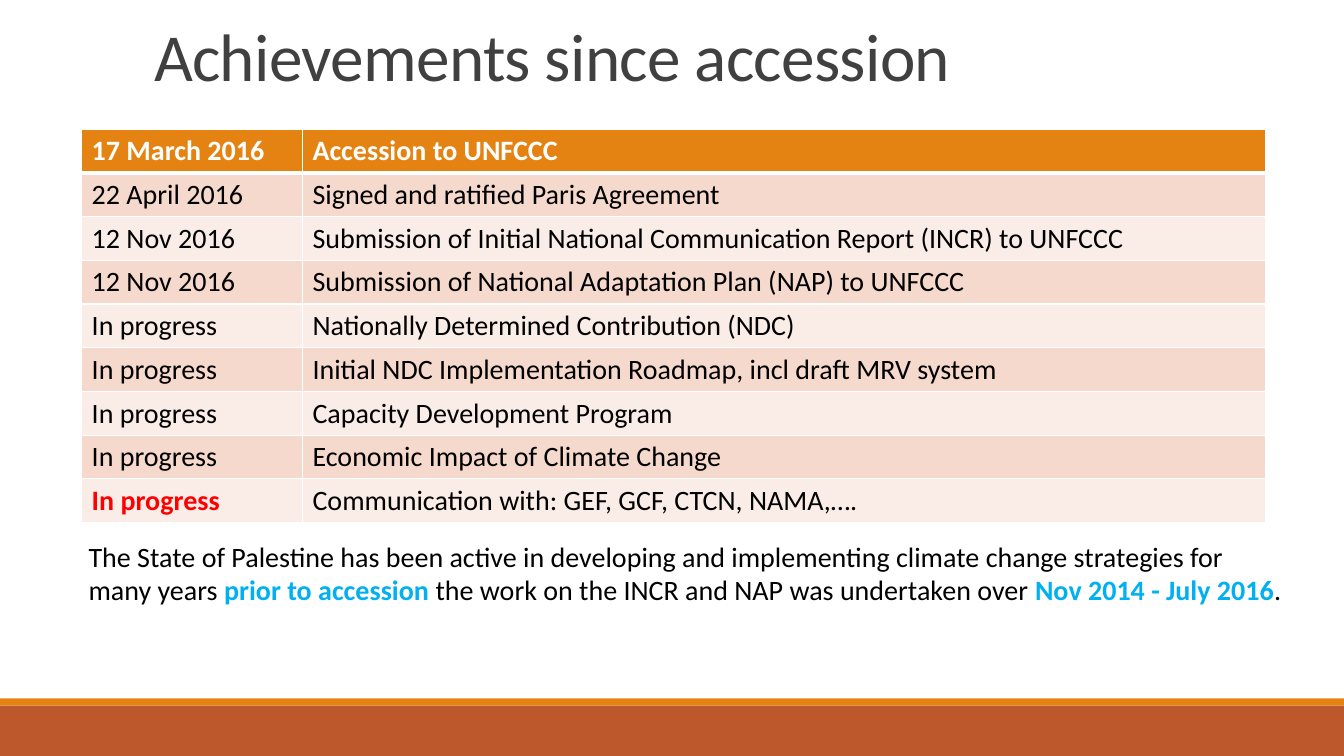
from pptx import Presentation
from pptx.dml.color import RGBColor as RGB
from pptx.enum.shapes import MSO_SHAPE as SHAPE
from pptx.enum.text import MSO_ANCHOR as ANCHOR
from pptx.oxml import parse_xml
from pptx.oxml.ns import nsdecls
from pptx.util import Inches, Pt

COLORS = {
    "white": "FFFFFF", "black": "000000", "title": "404040",
    "orange": "E48312", "rust": "BD582C", "band": "F5D9CC",
    "light": "FAEDE7", "red": "FF0000", "blue": "00B0F0",
}


def add_run(p, text, color, size=20, bold=False):
    r = p.add_run()
    r.text = text
    for name, value in {"name": "Calibri", "size": Pt(size), "bold": bold}.items():
        setattr(r.font, name, value)
    r.font.color.rgb = RGB.from_string(COLORS[color])
    return r


def add_text(s, *box):
    tf = s.shapes.add_textbox(*map(Inches, box)).text_frame
    tf.word_wrap = True
    return tf


prs = Presentation()
prs.slide_width, prs.slide_height = Inches(13.33), Inches(7.5)
s = prs.slides.add_slide(prs.slide_layouts[6])

# Footer bars
for top, height, color in [(7, 0.5, "rust"), (6.93, 0.07, "orange")]:
    sp = s.shapes.add_shape(SHAPE.RECTANGLE, 0, Inches(top), prs.slide_width, Inches(height))
    sp.shadow.inherit = False
    sp.fill.solid()
    sp.fill.fore_color.rgb = RGB.from_string(COLORS[color])
    sp.line.fill.background()

# Title
tf = add_text(s, 1.43, -0.6, 11, 1.59)
tf.vertical_anchor = ANCHOR.BOTTOM
p = tf.paragraphs[0]
p.line_spacing = 0.85
r = add_run(p, "Achievements since accession", "title", 48)
r.font._element.set("spc", "-50")

# Milestones table
milestones = [
    ("17 March 2016", "Accession to UNFCCC"),
    ("22 April 2016", "Signed and ratified Paris Agreement"),
    ("12 Nov 2016", "Submission of Initial National Communication Report (INCR) to UNFCCC"),
    ("12 Nov 2016", "Submission of National Adaptation Plan (NAP) to UNFCCC"),
    ("In progress", "Nationally Determined Contribution (NDC)"),
    ("In progress", "Initial NDC Implementation Roadmap, incl draft MRV system"),
    ("In progress", "Capacity Development Program"),
    ("In progress", "Economic Impact of Climate Change"),
    ("In progress", "Communication with: GEF, GCF, CTCN, NAMA,…."),
]
last = len(milestones) - 1
table = s.shapes.add_table(len(milestones), 2, Inches(0.81), Inches(1.28),
                           Inches(11.74), Inches(3.9)).table
for column, width in zip(table.columns, (2.19, 9.55)):
    column.width = Inches(width)

for i, row in enumerate(milestones):
    fill = "orange" if i == 0 else ("light", "band")[i % 2]
    for j, text in enumerate(row):
        cell = table.cell(i, j)
        # White borders, thicker below the header
        widths = {"L": 1, "R": 1, "T": 3 if i == 1 else 1, "B": 3 if i == 0 else 1}
        tcPr = cell._tc.get_or_add_tcPr()
        for side, width in widths.items():
            tcPr.append(parse_xml(
                f'<a:ln{side} {nsdecls("a")} w="{Pt(width)}"><a:solidFill>'
                f'<a:srgbClr val="{COLORS["white"]}"/></a:solidFill></a:ln{side}>'))
        cell.fill.solid()
        cell.fill.fore_color.rgb = RGB.from_string(COLORS[fill])
        urgent = i == last and j == 0
        color = "white" if i == 0 else "red" if urgent else "black"
        add_run(cell.text_frame.paragraphs[0], text, color, bold=i == 0 or urgent)

# Closing remark
p = add_text(s, 0.78, 5.3, 12.08, 0.77).paragraphs[0]
for text, color in [
    ("The State of Palestine has been active in developing and implementing "
     "climate change strategies for many years ", "black"),
    ("prior to accession ", "blue"),
    ("the work on the INCR and NAP was undertaken over ", "black"),
    ("Nov 2014 - July 2016", "blue"),
    (".", "black"),
]:
    add_run(p, text, color, bold=color == "blue")

prs.save("out.pptx")
